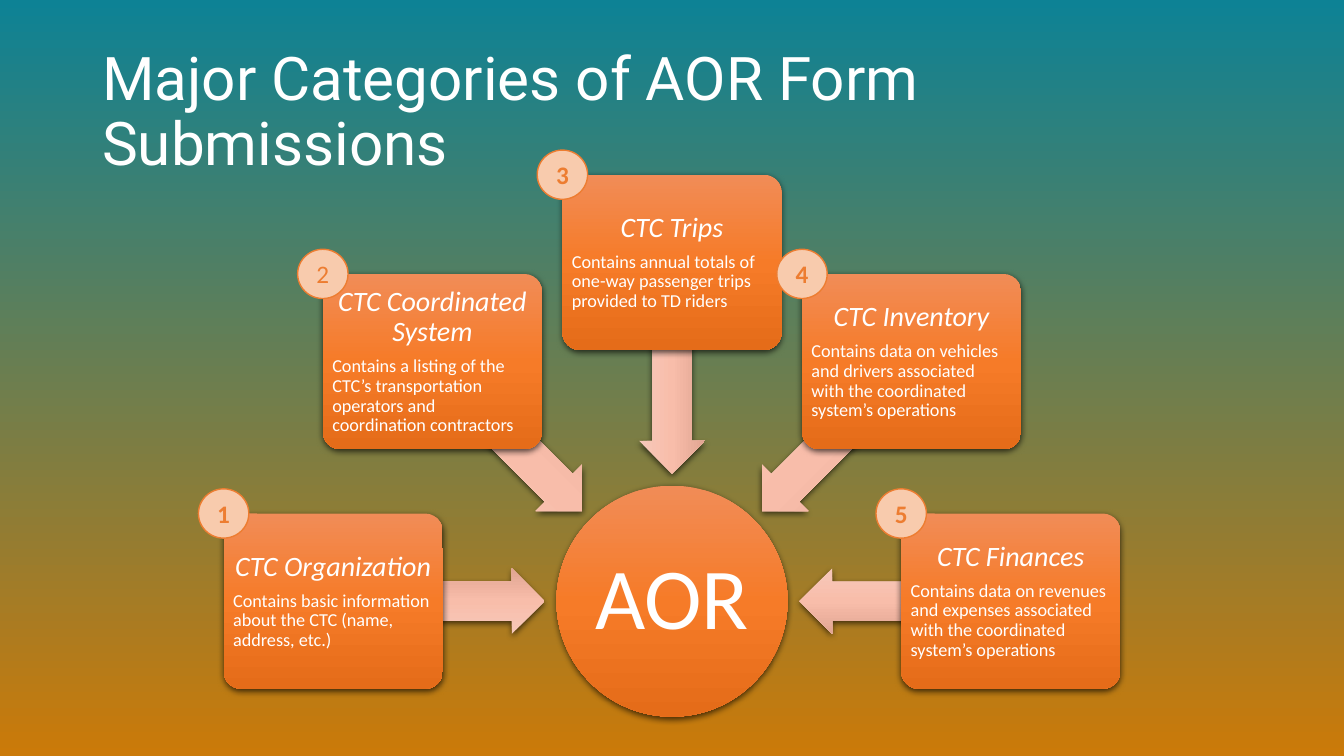
"""Build a slide of the five AOR form categories pointing at a central hub."""
from math import cos, radians, sin

from lxml import etree
from pptx import Presentation
from pptx.dml.color import RGBColor
from pptx.enum.shapes import MSO_SHAPE
from pptx.enum.text import MSO_ANCHOR, PP_ALIGN
from pptx.oxml.ns import qn
from pptx.util import Pt

CIRCLE = MSO_SHAPE.OVAL
BADGE = MSO_SHAPE.FLOWCHART_CONNECTOR
CARD = MSO_SHAPE.ROUNDED_RECTANGLE
ARROW = MSO_SHAPE.LEFT_ARROW
LEFT, CENTER = PP_ALIGN.LEFT, PP_ALIGN.CENTER
MIDDLE = MSO_ANCHOR.MIDDLE

WIDTH, HEIGHT = 960, 540
HUB_X, HUB_Y, HUB_SIZE = 480, 429.4, 165
CARD_RADIUS, CARD_WIDTH, CARD_HEIGHT = 242, 156.5, 125.2
ARROW_RADIUS, ARROW_LENGTH, ARROW_WIDTH = 166.3, 150.5, 46.8

CATEGORIES = [
    ("CTC Organization", "Contains basic information about the CTC (name, address, etc.)"),
    ("CTC Coordinated System", "Contains a listing of the CTC’s transportation operators "
                               "and coordination contractors"),
    ("CTC Trips", "Contains annual totals of one-way passenger trips provided to TD riders"),
    ("CTC Inventory", "Contains data on vehicles and drivers associated with "
                      "the coordinated system’s operations"),
    ("CTC Finances", "Contains data on revenues and expenses associated with "
                     "the coordinated system’s operations"),
]


def color(value):
    return RGBColor.from_string(value)


def add_element(parent, tag, **attributes):
    return etree.SubElement(parent, qn(tag), attributes)


def set_gradient(fill, element, stops):
    fill.gradient()
    fill.gradient_angle = 270
    stop_list = element.find(".//" + qn("a:gsLst"))
    for stop in list(stop_list):
        stop_list.remove(stop)
    for position, value in stops:
        stop = add_element(stop_list, "a:gs", pos=str(position * 1000))
        add_element(stop, "a:srgbClr", val=value)


def add_shadow(shape):
    effects = shape._element.spPr.find(qn("a:effectLst"))
    shadow = add_element(effects, "a:outerShdw", blurRad=str(Pt(4.5)), dist=str(Pt(1.5)),
                         dir="5400000", algn="ctr", rotWithShape="0")
    black = add_element(shadow, "a:srgbClr", val="000000")
    add_element(black, "a:alpha", val="63000")


def write(paragraph, text, size, font="Calibri", hue="FFFFFF", bold=False, italic=False,
          align=CENTER, spacing=0.9, after=0):
    paragraph.alignment = align
    paragraph.line_spacing = spacing
    paragraph.space_after = Pt(after)
    run = paragraph.add_run()
    run.text = text
    run.font.size = Pt(size)
    run.font.name = font
    run.font.bold = bold
    run.font.italic = italic
    run.font.color.rgb = color(hue)


class RadialSlide:
    """Holds the slide and its style, and draws each kind of element."""

    background = [(0, "0D8295"), (100, "CB7A09")]
    strong = [(0, "F18C57"), (50, "F67B28"), (100, "E56C19")]
    pale = [(0, "F7C8BA"), (50, "F8BDAA"), (100, "E1A592")]
    badge_fill, accent = "F8CBAD", "ED7D31"

    def __init__(self, presentation):
        self.slide = presentation.slides.add_slide(presentation.slide_layouts[6])
        set_gradient(self.slide.background.fill, self.slide._element, self.background)

    def frame(self, shape, margin):
        frame = shape.text_frame
        frame.word_wrap = True
        frame.vertical_anchor = MIDDLE
        frame.margin_left = frame.margin_right = Pt(margin)
        frame.margin_top = frame.margin_bottom = Pt(margin)
        return frame

    def shape(self, kind, x, y, width, height):
        shape = self.slide.shapes.add_shape(
            kind, Pt(x - width / 2), Pt(y - height / 2), Pt(width), Pt(height))
        shape.shadow.inherit = False
        return shape

    def glossy(self, kind, x, y, width, height, stops):
        shape = self.shape(kind, x, y, width, height)
        set_gradient(shape.fill, shape._element, stops)
        shape.line.fill.background()
        add_shadow(shape)
        return shape

    def title(self, text):
        box = self.slide.shapes.add_textbox(Pt(66), Pt(28.75), Pt(828), Pt(104.4))
        frame = self.frame(box, 7.2)
        write(frame.paragraphs[0], text, 43, font="Roboto", align=LEFT)

    def hub(self, text):
        shape = self.glossy(CIRCLE, HUB_X, HUB_Y, HUB_SIZE, HUB_SIZE, self.strong)
        write(self.frame(shape, 0).paragraphs[0], text, 62)

    def arrow(self, x, y, rotation):
        shape = self.glossy(ARROW, x, y, ARROW_LENGTH, ARROW_WIDTH, self.pale)
        shape.adjustments[0] = 0.6
        shape.adjustments[1] = 0.5
        shape.rotation = rotation

    def card(self, x, y, heading, body):
        shape = self.glossy(CARD, x, y, CARD_WIDTH, CARD_HEIGHT, self.strong)
        shape.adjustments[0] = 0.1
        frame = self.frame(shape, 3.1)
        write(frame.paragraphs[0], heading, 20, italic=True, after=6.5)
        write(frame.add_paragraph(), body, 13, align=LEFT)

    def badge(self, x, y, number):
        shape = self.shape(BADGE, x, y, 36, 35.2)
        shape.fill.solid()
        shape.fill.fore_color.rgb = color(self.badge_fill)
        shape.line.color.rgb = color(self.accent)
        shape.line.width = Pt(1)
        write(self.frame(shape, 0).paragraphs[0], str(number), 18, hue=self.accent,
              bold=number != 2, spacing=1.0)


def around_hub(angle, radius):
    return HUB_X + radius * cos(radians(angle)), HUB_Y + radius * sin(radians(angle))


def main():
    presentation = Presentation()
    presentation.slide_width = Pt(WIDTH)
    presentation.slide_height = Pt(HEIGHT)
    radial = RadialSlide(presentation)
    radial.title("Major Categories of AOR Form Submissions")
    radial.hub("AOR")
    angles = [180 + 45 * index for index in range(len(CATEGORIES))]
    for angle, (heading, body) in zip(angles, CATEGORIES):
        radial.arrow(*around_hub(angle, ARROW_RADIUS), angle % 360)
        radial.card(*around_hub(angle, CARD_RADIUS), heading, body)
    for number, angle in enumerate(angles, start=1):
        x, y = around_hub(angle, CARD_RADIUS)
        radial.badge(x - CARD_WIDTH / 2, y - CARD_HEIGHT / 2, number)
    presentation.save("out.pptx")


if __name__ == "__main__":
    main()
